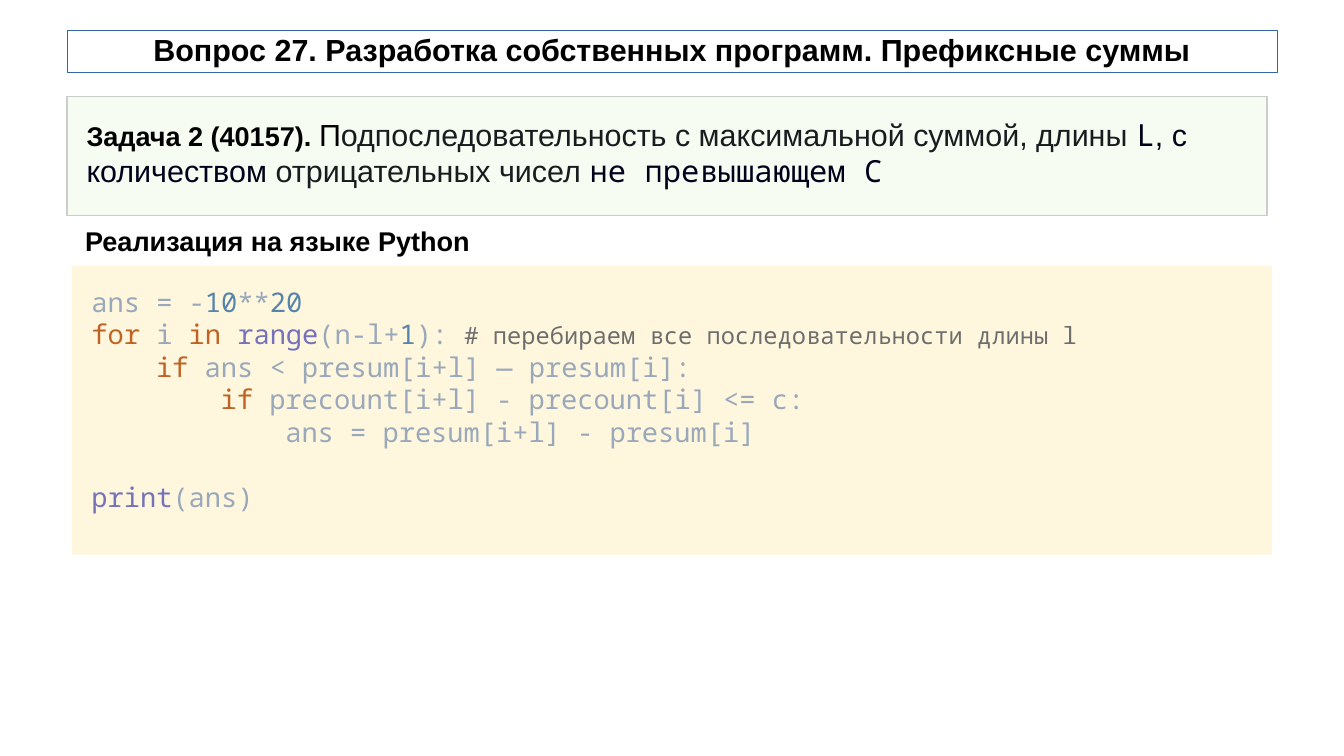
import dataclasses
import typing

import pptx
import pptx.dml.color
import pptx.enum.shapes
import pptx.enum.text
import pptx.util

COLORS = {
    "black": "000000",
    "title_line": "3465A4",
    "task_fill": "F6FCF2",
    "task_line": "CCCCCC",
    "task_text": "191C1F",
    "task_term": "00001A",
    "code_fill": "FEF7DD",
    "plain": "99A8BA",
    "number": "5684AD",
    "keyword": "BF6426",
    "builtin": "7572B9",
    "comment": "6D6D6D",
}
SANS = "Arial"
MONO = "Noto Sans Mono"
INDENT_STEP = 0.53
CODE_LINE_HEIGHT = 19.2


@dataclasses.dataclass(frozen=True)
class Span:
    text: str
    color: str = "plain"
    size: float = 16
    font: str = MONO
    bold: bool = False


@dataclasses.dataclass(frozen=True)
class Line:
    spans: tuple[Span, ...]
    indent: int = 0
    before: float = 0
    after: float = 0
    spacing: float = 1.0
    centered: bool = False


@dataclasses.dataclass(frozen=True)
class Panel:
    box: tuple[float, float, float, float]
    insets: tuple[float, float]
    lines: tuple[Line, ...]
    fill: typing.Optional[str] = None
    outline: typing.Optional[str] = None
    outline_width: float = 0
    middle: bool = False


CODE = Panel(
    (0.59, 2.18, 9.84, 2.37),
    (0.16, 0.16),
    (
        Line((Span("ans = -"), Span("10", "number"), Span("**"), Span("20", "number"))),
        Line((
            Span("for ", "keyword"),
            Span("i "),
            Span("in ", "keyword"),
            Span("range", "builtin"),
            Span("(n-l+"),
            Span("1", "number"),
            Span("): "),
            Span("# перебираем все последовательности длины l", "comment", 14),
        )),
        Line((Span("if ", "keyword"), Span("ans < presum[i+l] — presum[i]:")), indent=1),
        Line((Span("if ", "keyword"), Span("precount[i+l] - precount[i] <= c:")), indent=2),
        Line((Span("ans = presum[i+l] - presum[i]"),), indent=3),
        Line((Span("print", "builtin"), Span("(ans)")), before=CODE_LINE_HEIGHT),
    ),
    fill="code_fill",
)
CODE_HEADING = Panel(
    (0.6, 1.79, 3.93, 0.35),
    (0.1, 0.05),
    (Line((Span("Реализация на языке Python", "black", 16, SANS, True),)),),
)
TASK = Panel(
    (0.55, 0.79, 9.84, 0.98),
    (0.16, 0.16),
    (
        Line(
            (
                Span("Задача 2 (40157). ", "black", 16, SANS, True),
                Span("П", "black", 18, SANS),
                Span("одпоследовательность с максимальной суммой, длины ", "task_text", 18, SANS),
                Span("L", "task_term", 18),
                Span(", с количеством ", "task_term", 18, SANS),
                Span("отрицательных чисел ", "task_text", 18, SANS),
                Span("не превышающем С", "task_term", 18),
            ),
            before=11.9,
            after=9.9,
        ),
    ),
    fill="task_fill",
    outline="task_line",
)
TITLE = Panel(
    (0.55, 0.25, 9.92, 0.34),
    (0.04, 0),
    (
        Line(
            (Span("Вопрос 27. Разработка собственных программ. Префиксные суммы",
                  "black", 18, SANS, True),),
            spacing=0.9,
            centered=True,
        ),
    ),
    outline="title_line",
    outline_width=0.28,
    middle=True,
)


def rgb(name: str) -> pptx.dml.color.RGBColor:
    return pptx.dml.color.RGBColor.from_string(COLORS[name])


def write_line(paragraph: typing.Any, line: Line) -> None:
    alignment = pptx.enum.text.PP_ALIGN
    paragraph.alignment = alignment.CENTER if line.centered else alignment.LEFT
    paragraph.space_before = pptx.util.Pt(line.before)
    paragraph.space_after = pptx.util.Pt(line.after)
    paragraph.line_spacing = line.spacing
    if line.indent:
        margin = pptx.util.Inches(line.indent * INDENT_STEP)
        properties = paragraph._p.get_or_add_pPr()
        properties.set("marL", str(int(margin)))
        properties.set("indent", "0")
    for span in line.spans:
        run = paragraph.add_run()
        run.text = span.text
        run.font.name = span.font
        run.font.size = pptx.util.Pt(span.size)
        run.font.bold = span.bold
        run.font.color.rgb = rgb(span.color)


def draw_panel(slide: typing.Any, panel: Panel) -> None:
    box = [pptx.util.Inches(length) for length in panel.box]
    if panel.fill or panel.outline:
        shape = slide.shapes.add_shape(pptx.enum.shapes.MSO_SHAPE.RECTANGLE, *box)
        shape.shadow.inherit = False
    else:
        shape = slide.shapes.add_textbox(*box)
    if panel.fill:
        shape.fill.solid()
        shape.fill.fore_color.rgb = rgb(panel.fill)
    else:
        shape.fill.background()
    if panel.outline:
        shape.line.color.rgb = rgb(panel.outline)
        shape.line.width = pptx.util.Pt(panel.outline_width)
    else:
        shape.line.fill.background()

    frame = shape.text_frame
    frame.word_wrap = True
    anchor = pptx.enum.text.MSO_ANCHOR
    frame.vertical_anchor = anchor.MIDDLE if panel.middle else anchor.TOP
    horizontal, vertical = (pptx.util.Inches(inset) for inset in panel.insets)
    frame.margin_left = frame.margin_right = horizontal
    frame.margin_top = frame.margin_bottom = vertical
    for index, line in enumerate(panel.lines):
        paragraph = frame.add_paragraph() if index else frame.paragraphs[0]
        write_line(paragraph, line)


def main() -> None:
    presentation = pptx.Presentation()
    presentation.slide_width = pptx.util.Inches(11.02)
    presentation.slide_height = pptx.util.Inches(6.2)
    slide = presentation.slides.add_slide(presentation.slide_layouts[6])
    for panel in (CODE, CODE_HEADING, TASK, TITLE):
        draw_panel(slide, panel)
    presentation.save("out.pptx")


if __name__ == "__main__":
    main()
